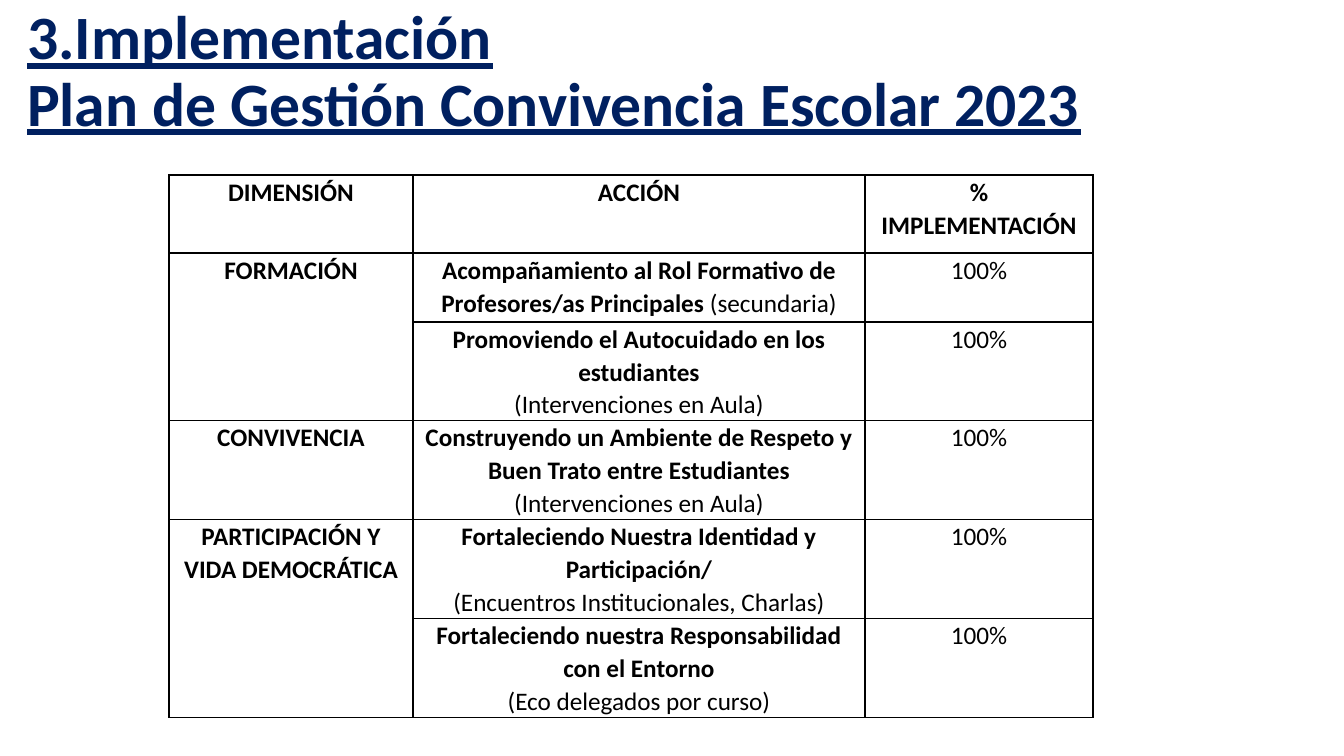
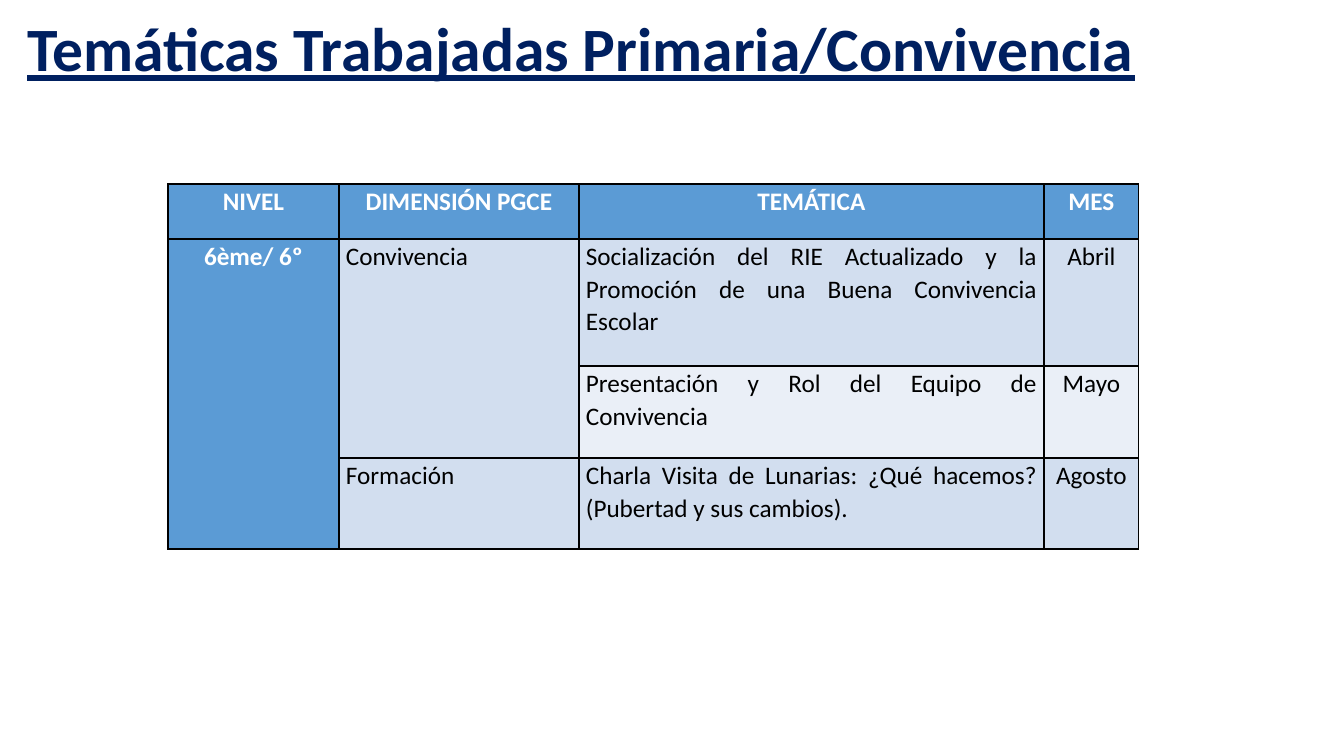
"""Build two slides on the school coexistence plan: its progress and the topics covered."""
from dataclasses import dataclass

from lxml.etree import SubElement
from pptx import Presentation
from pptx.dml.color import RGBColor as RGB
from pptx.enum.text import MSO_ANCHOR as ANCHOR, PP_ALIGN as ALIGN
from pptx.oxml.ns import qn
from pptx.util import Pt


@dataclass(frozen=True)
class Theme:
    font: str = "Calibri"
    title_size: int = 44
    body_size: int = 18
    navy: str = "002060"
    black: str = "000000"
    white: str = "FFFFFF"
    blue: str = "5B9BD5"
    band: str = "D2DEEF"
    light_band: str = "EAEFF7"


THEME = Theme()
PX = 914400 / 100.8


def add_grid(slide, left, top, cols, rows):
    """Add a plain table with black cell borders."""
    box = [round(n * PX) for n in (left, top, sum(cols), sum(rows))]
    table = slide.shapes.add_table(len(rows), len(cols), *box).table
    table.first_row = table.horz_banding = False
    for col, width in zip(table.columns, cols):
        col.width = round(width * PX)
    for row, height in zip(table.rows, rows):
        row.height = round(height * PX)
    for cell in table.iter_cells():
        cell.margin_left = cell.margin_right = round(7 * PX)
        cell.margin_top = cell.margin_bottom = 0
        tcPr = cell._tc.get_or_add_tcPr()
        for side in ("a:lnL", "a:lnR", "a:lnT", "a:lnB"):
            ln = SubElement(tcPr, qn(side), w=str(Pt(1)))
            fill = SubElement(ln, qn("a:solidFill"))
            SubElement(fill, qn("a:srgbClr"), val=THEME.black)
        cell.fill.background()
    return table


def write_cell(cell, paragraphs, color=THEME.black, align=ALIGN.CENTER, before=0):
    """Write paragraphs, each a list of (text, bold) runs, into a cell."""
    tf = cell.text_frame
    for i, runs in enumerate(paragraphs):
        p = tf.add_paragraph() if i else tf.paragraphs[0]
        p.alignment = align
        p.line_spacing = 1.07
        p.space_before = Pt(before)
        for text, bold in runs:
            r = p.add_run()
            r.text = text
            r.font.name = THEME.font
            r.font.size = Pt(THEME.body_size)
            r.font.bold = bold
            r.font.color.rgb = RGB.from_string(color)


prs = Presentation()
prs.slide_width, prs.slide_height = round(1344 * PX), round(756 * PX)

slides = []
for title, top in (
    ("3.Implementación\vPlan de Gestión Convivencia Escolar 2023", 0),
    ("Temáticas Trabajadas Primaria/Convivencia", -21),
):
    s = prs.slides.add_slide(prs.slide_layouts[5])
    sp = s.shapes.title
    sp.left, sp.top, sp.width, sp.height = [round(n * PX) for n in (17, top, 1295, 146)]
    tf = sp.text_frame
    tf.text = title
    tf.vertical_anchor = ANCHOR.MIDDLE
    p = tf.paragraphs[0]
    p.alignment = ALIGN.LEFT
    p.line_spacing = 0.9
    for r in p.runs:
        r.font.name = THEME.font
        r.font.size = Pt(THEME.title_size)
        r.font.bold = r.font.underline = True
        r.font.color.rgb = RGB.from_string(THEME.navy)
    slides.append(s)

plan = add_grid(slides[0], 169, 175, [244, 452, 228], [78, 69, 98, 99, 99, 99])
for col, text in enumerate(("DIMENSIÓN", "ACCIÓN", "% IMPLEMENTACIÓN")):
    write_cell(plan.cell(0, col), [[(text, True)]])

for first, last, text in (
    (1, 2, "FORMACIÓN"),
    (3, 3, "CONVIVENCIA"),
    (4, 5, "PARTICIPACIÓN Y VIDA DEMOCRÁTICA"),
):
    if last > first:
        plan.cell(first, 0).merge(plan.cell(last, 0))
    write_cell(plan.cell(first, 0), [[(text, True)]])

actions = [
    [[("Acompañamiento al Rol Formativo de Profesores/as Principales ", True),
      ("(secundaria)", False)]],
    [[("Promoviendo el Autocuidado en los estudiantes", True)],
     [("(Intervenciones en Aula)", False)]],
    [[("Construyendo un Ambiente de Respeto y Buen Trato entre Estudiantes", True)],
     [("(Intervenciones en Aula)", False)]],
    [[("Fortaleciendo Nuestra Identidad y Participación/", True)],
     [("(Encuentros Institucionales, Charlas)", False)]],
    [[("Fortaleciendo nuestra Responsabilidad con el Entorno", True)],
     [("(Eco delegados por curso)", False)]],
]
for row, action in enumerate(actions, 1):
    write_cell(plan.cell(row, 1), action)
    write_cell(plan.cell(row, 2), [[("100%", False)]])

topics = add_grid(slides[1], 168, 184, [171, 240, 465, 95], [55, 127, 92, 91])
topics.cell(1, 0).merge(topics.cell(3, 0))
topics.cell(1, 1).merge(topics.cell(2, 1))
content = [
    ("NIVEL", "DIMENSIÓN PGCE", "TEMÁTICA", "MES"),
    ("6ème/ 6º", "Convivencia",
     "Socialización del RIE Actualizado y la Promoción de una Buena Convivencia Escolar",
     "Abril"),
    ("", "", "Presentación y Rol del Equipo de Convivencia", "Mayo"),
    ("", "Formación", "Charla Visita de Lunarias: ¿Qué hacemos? (Pubertad y sus cambios).",
     "Agosto"),
]
for row, texts in enumerate(content):
    for col, text in enumerate(texts):
        cell = topics.cell(row, col)
        header = row == 0 or col == 0
        band = THEME.band if row % 2 else THEME.light_band
        cell.fill.solid()
        cell.fill.fore_color.rgb = RGB.from_string(THEME.blue if header else band)
        if text:
            write_cell(cell, [[(text, header)]],
                       color=THEME.white if header else THEME.black,
                       align=ALIGN.CENTER if header or col == 3 else ALIGN.JUSTIFY,
                       before=6)

prs.save("out.pptx")
